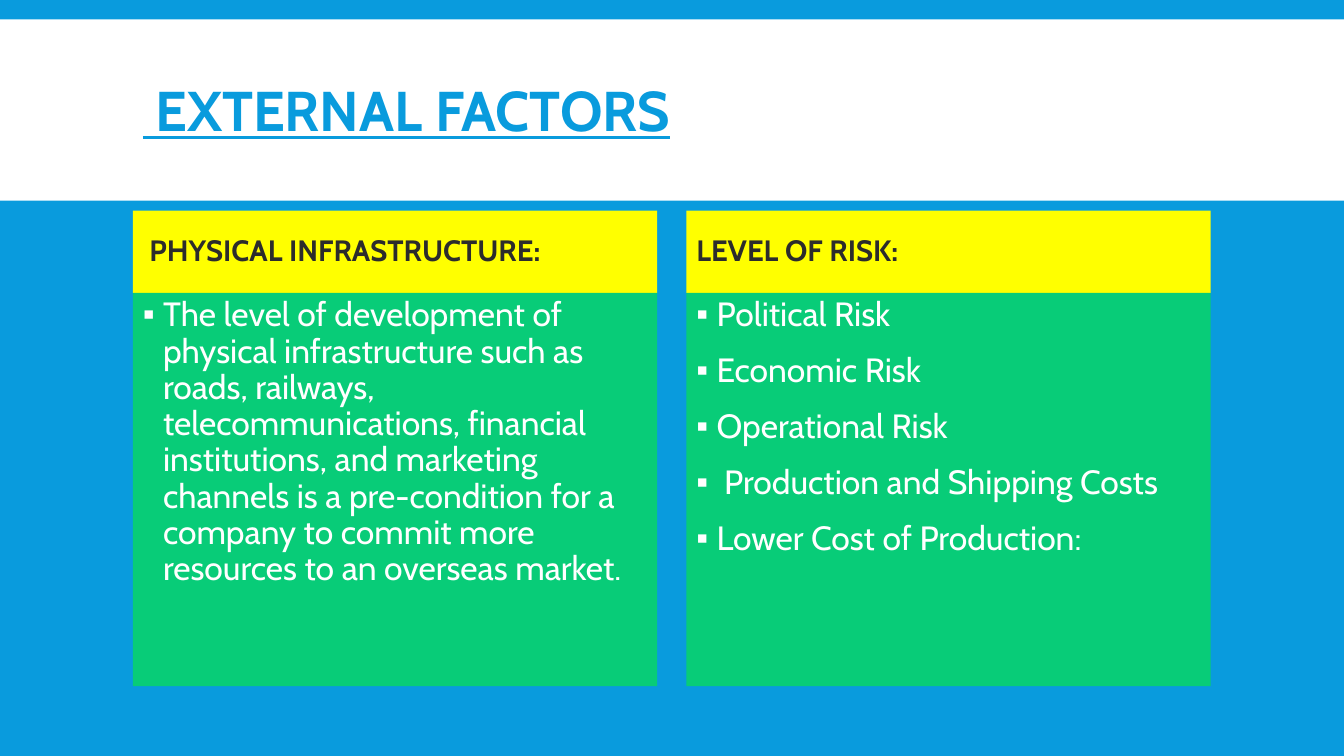
from lxml.etree import SubElement
from pptx import Presentation
from pptx.dml.color import RGBColor
from pptx.enum.shapes import MSO_SHAPE as Shape
from pptx.enum.text import MSO_ANCHOR as Anchor, PP_ALIGN as Align
from pptx.oxml.ns import qn
from pptx.util import Cm, Pt

BLUE = RGBColor(0x09, 0x9B, 0xDD)
WHITE = RGBColor(0xFF, 0xFF, 0xFF)
YELLOW = RGBColor(0xFF, 0xFF, 0x00)
GREEN = RGBColor(0x08, 0xCC, 0x78)
DARK = RGBColor(0x2C, 0x2C, 0x2C)

LEFT, WIDTH, STEP = 3.35, 13.21, 13.95
HEAD_TOP, HEAD_HIGH, BODY_HIGH = 5.31, 2.07, 9.91
COLUMNS = [
    (" PHYSICAL INFRASTRUCTURE:", [
        "The level of development of physical infrastructure such as roads, "
        "railways, telecommunications, financial institutions, and marketing "
        "channels is a pre-condition for a company to commit more resources "
        "to an overseas market."]),
    ("LEVEL OF RISK:", [
        "Political Risk", "Economic Risk", "Operational Risk",
        " Production and Shipping Costs", "Lower Cost of Production:"]),
]


class Painter:
    """Draws styled elements on the current slide."""

    def __init__(self, slide, font):
        self.slide = slide
        self.font = font

    def ground(self, color):
        fill = self.slide.background.fill
        fill.solid()
        fill.fore_color.rgb = color

    def block(self, x, y, w, h, color):
        box = self.slide.shapes.add_shape(
            Shape.RECTANGLE, Cm(x), Cm(y), Cm(w), Cm(h))
        box.shadow.inherit = False
        box.fill.solid()
        box.fill.fore_color.rgb = color
        box.line.fill.background()
        return box.text_frame

    def label(self, x, y, w, h):
        return self.slide.shapes.add_textbox(
            Cm(x), Cm(y), Cm(w), Cm(h)).text_frame

    def letter(self, frame, lines, size, color, anchor=Anchor.MIDDLE,
               bold=False, under=False, bullet=False, lead=0.9):
        frame.word_wrap = True
        frame.vertical_anchor = anchor
        for i, line in enumerate(lines):
            para = frame.add_paragraph() if i else frame.paragraphs[0]
            para.alignment = Align.LEFT
            para.line_spacing = lead
            para.space_before, para.space_after = Pt(12), Pt(2)
            if bullet:
                self.mark(para, color)
            run = para.add_run()
            run.text = line
            font = run.font
            font.name, font.size = self.font, Pt(size)
            font.bold, font.underline = bold, under
            font.color.rgb = color

    def mark(self, para, color):
        props = para._p.get_or_add_pPr()
        props.set("marL", str(Cm(0.51)))
        props.set("indent", str(-Cm(0.51)))
        tint = SubElement(props, qn("a:buClr"))
        SubElement(tint, qn("a:srgbClr"), val=str(color))
        SubElement(props, qn("a:buFont"), typeface="Arial")
        SubElement(props, qn("a:buChar"), char="▪")


def main():
    deck = Presentation()
    deck.slide_width, deck.slide_height = Cm(33.87), Cm(19.05)
    art = Painter(deck.slides.add_slide(deck.slide_layouts[6]), "Cabin")
    art.ground(BLUE)
    art.block(0, 0.49, 33.87, 4.57, WHITE)
    title = art.label(LEFT, 0.79, STEP + WIDTH, 4.19)
    art.letter(title, [" EXTERNAL FACTORS"], 40, BLUE,
               bold=True, under=True, lead=0.85)
    for i, (head, items) in enumerate(COLUMNS):
        x = LEFT + i * STEP
        top = art.block(x, HEAD_TOP, WIDTH, HEAD_HIGH, YELLOW)
        art.letter(top, [head], 21, DARK, bold=True)
        body = art.block(x, HEAD_TOP + HEAD_HIGH, WIDTH, BODY_HIGH, GREEN)
        art.letter(body, items, 24, WHITE, anchor=Anchor.TOP, bullet=True)
    deck.save("out.pptx")


if __name__ == "__main__":
    main()
